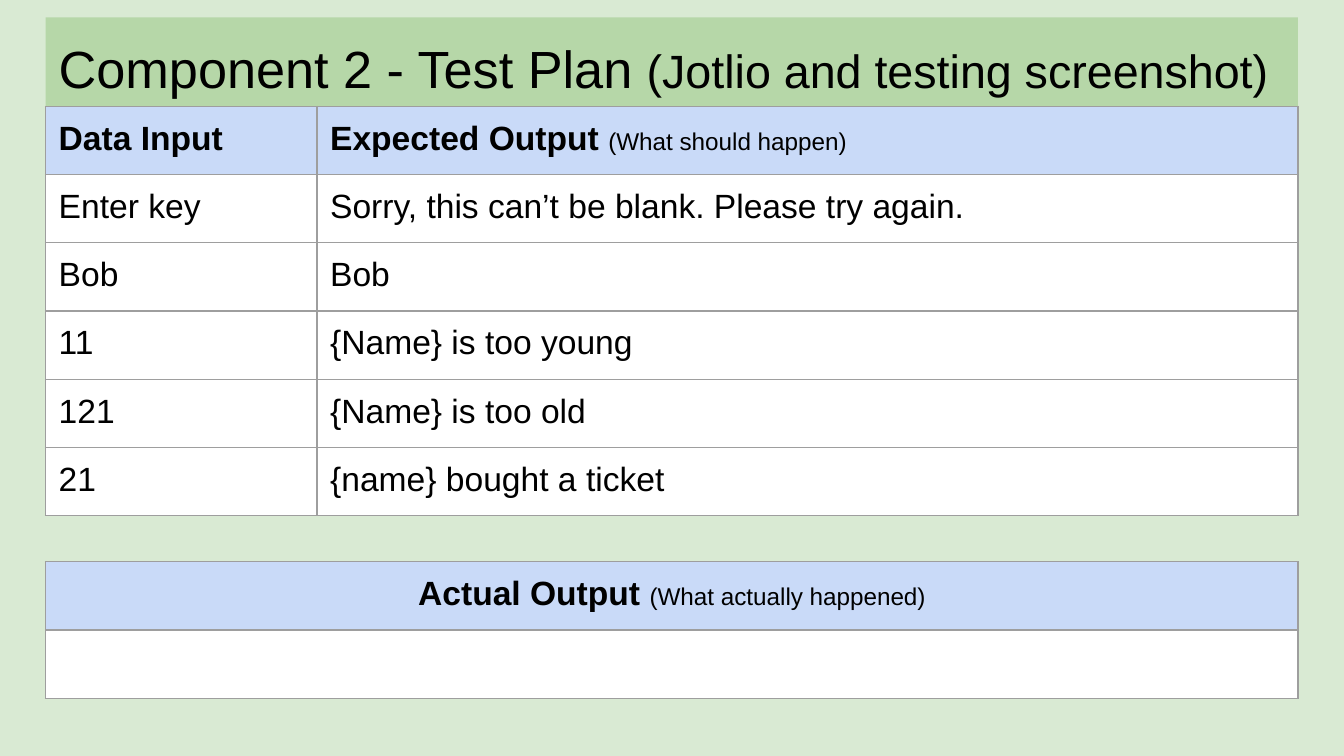
from lxml import etree
from pptx import Presentation
from pptx.dml.color import RGBColor
from pptx.enum.text import MSO_ANCHOR, PP_ALIGN
from pptx.oxml.ns import qn
from pptx.util import Cm, Pt

LEFT, CENTER = PP_ALIGN.LEFT, PP_ALIGN.CENTER
TOP = MSO_ANCHOR.TOP

COLORS = {
    "background": "D9EAD3",
    "title": "B6D7A8",
    "header": "C9DAF8",
    "body": "FFFFFF",
    "border": "9E9E9E",
    "text": "000000",
}
FONT = "Arial"
MARGIN_LEFT = Cm(0.86)
INSET = Cm(0.25)
ROW_HEIGHT = Cm(1.29)
COLUMN_WIDTHS = [Cm(5.13), Cm(18.54)]
CONTENT_WIDTH = sum(COLUMN_WIDTHS)

TEST_HEADERS = [("Data Input", ""), ("Expected Output ", "(What should happen)")]
TEST_CASES = [
    ("Enter key", "Sorry, this can’t be blank. Please try again."),
    ("Bob", "Bob"),
    ("11", "{Name} is too young"),
    ("121", "{Name} is too old"),
    ("21", "{name} bought a ticket"),
]
RESULT_HEADERS = [("Actual Output ", "(What actually happened)")]


def set_fill(fill, name):
    fill.solid()
    fill.fore_color.rgb = RGBColor.from_string(COLORS[name])


def write_text(paragraph, main, note="", size=18, note_size=13, bold=False, align=LEFT):
    """Write the main text, followed by a smaller regular note if there is one."""
    paragraph.alignment = align
    paragraph.font.name = FONT
    paragraph.font.size = Pt(size)
    for text, run_size, run_bold in ((main, size, bold), (note, note_size, False)):
        if text:
            run = paragraph.add_run()
            run.text = text
            run.font.name = FONT
            run.font.size = Pt(run_size)
            run.font.bold = run_bold
            run.font.color.rgb = RGBColor.from_string(COLORS["text"])


def set_borders(cell):
    properties = cell._tc.get_or_add_tcPr()
    for index, side in enumerate(("lnL", "lnR", "lnT", "lnB")):
        line = etree.Element(qn(f"a:{side}"), w=str(Pt(0.75)))
        solid = etree.SubElement(line, qn("a:solidFill"))
        etree.SubElement(solid, qn("a:srgbClr"), val=COLORS["border"])
        properties.insert(index, line)


def format_cell(cell, fill_name):
    set_fill(cell.fill, fill_name)
    set_borders(cell)
    cell.margin_left = cell.margin_right = INSET
    cell.margin_top = cell.margin_bottom = INSET
    cell.vertical_anchor = TOP


def add_title(slide, main, note):
    title = slide.shapes.title
    title.left, title.top = MARGIN_LEFT, Cm(0.33)
    title.width, title.height = CONTENT_WIDTH, Cm(2.05)
    set_fill(title.fill, "title")
    frame = title.text_frame
    frame.word_wrap = True
    frame.vertical_anchor = TOP
    frame.margin_left = frame.margin_right = frame.margin_bottom = INSET
    frame.margin_top = Cm(0.35)
    paragraph = frame.paragraphs[0]
    paragraph.line_spacing = 1.0
    paragraph.space_before = Pt(0)
    write_text(paragraph, main, note, size=28, note_size=25)


def add_grid(slide, top, widths, headers, rows, header_align=LEFT):
    row_count = len(rows) + 1
    table = slide.shapes.add_table(
        row_count, len(widths), MARGIN_LEFT, top, sum(widths), ROW_HEIGHT * row_count
    ).table
    for column, width in zip(table.columns, widths):
        column.width = width
    for row in table.rows:
        row.height = ROW_HEIGHT

    # Header row
    for index, (main, note) in enumerate(headers):
        cell = table.cell(0, index)
        format_cell(cell, "header")
        write_text(cell.text_frame.paragraphs[0], main, note, bold=True, align=header_align)

    # Body rows
    for row_index, texts in enumerate(rows, start=1):
        for column_index, text in enumerate(texts):
            cell = table.cell(row_index, column_index)
            format_cell(cell, "body")
            write_text(cell.text_frame.paragraphs[0], text)


def main():
    presentation = Presentation()
    presentation.slide_width, presentation.slide_height = Cm(25.4), Cm(14.29)
    slide = presentation.slides.add_slide(presentation.slide_layouts[5])
    set_fill(slide.background.fill, "background")

    add_title(slide, "Component 2 - Test Plan ", "(Jotlio and testing screenshot)")
    # Planned tests
    add_grid(slide, Cm(2.01), COLUMN_WIDTHS, TEST_HEADERS, TEST_CASES)
    # Test results, with an empty row to fill in
    add_grid(slide, Cm(10.62), [CONTENT_WIDTH], RESULT_HEADERS, [("",)], CENTER)

    presentation.save("out.pptx")


if __name__ == "__main__":
    main()
